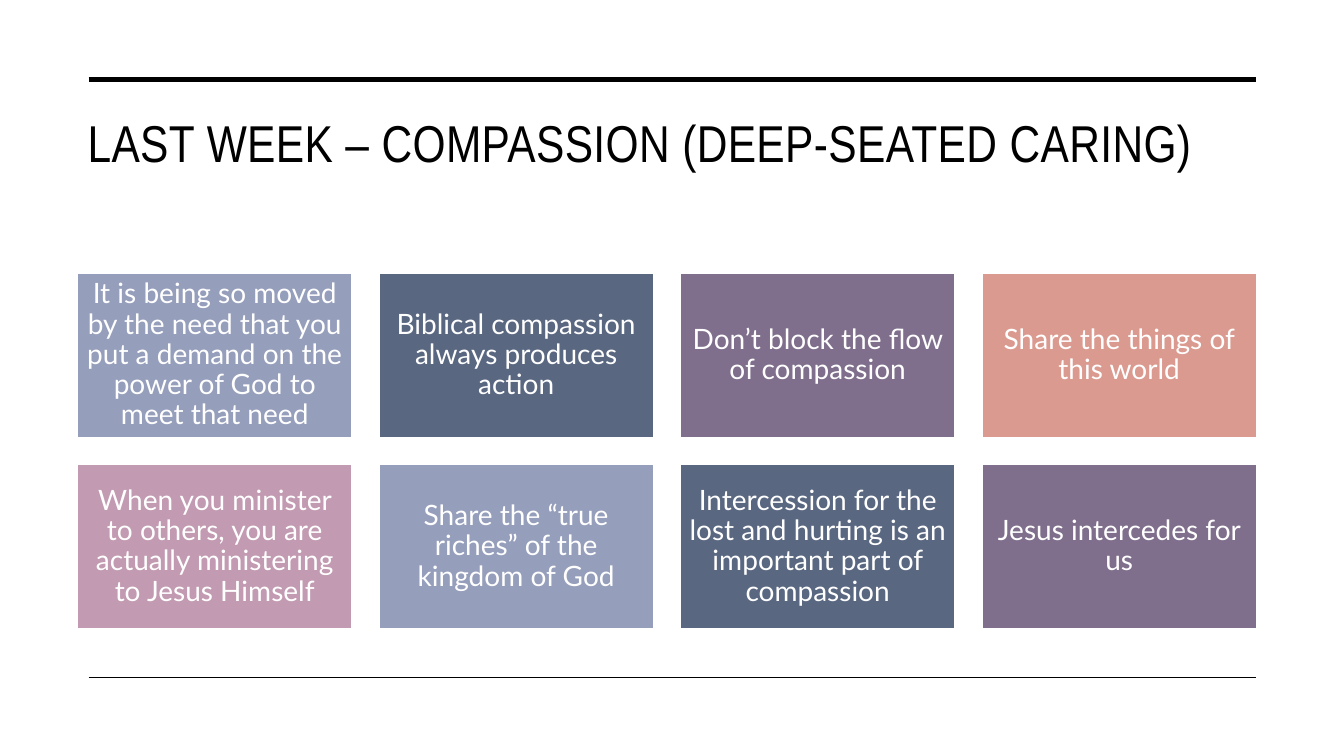
from lxml import etree
from pptx import Presentation, util as u
from pptx.dml.color import RGBColor
from pptx.enum import shapes, text
from pptx.oxml.ns import qn

BLUE, SLATE, PLUM, CORAL, ROSE = "959EBB", "596781", "7F6E8C", "DB9A8F", "C29AB1"
CARDS = [
    ("It is being so moved by the need that you put a demand on the power of God to meet that need", BLUE),
    ("Biblical compassion always produces action", SLATE),
    ("Don’t block the flow of compassion", PLUM),
    ("Share the things of this world", CORAL),
    ("When you minister to others, you are actually ministering to Jesus Himself", ROSE),
    ("Share the “true riches” of the kingdom of God", BLUE),
    ("Intercession for the lost and hurting is an important part of compassion", SLATE),
    ("Jesus intercedes for us", PLUM),
]


def colour(value):
    """Turn a hex string into a colour."""
    return RGBColor.from_string(value)


def apply(target, formats):
    """Set each format value on the target."""
    for name, value in formats.items():
        setattr(target, name, value)


class Board:
    """Style, card grid and current slide."""

    ink, paper = "000000", "FFFFFF"
    heading = {"name": "Arial Narrow", "size": u.Pt(37)}
    body = {"name": "Lato", "size": u.Pt(20)}
    columns, left, top = 4, 0.77, 2.71
    column_step, row_step = 2.99, 1.9
    card_width, card_height = 2.72, 1.63
    rule_left, rule_right = 0.88, 12.46

    def __init__(self, deck):
        """Add a blank page to the deck."""
        self.page = deck.slides.add_slide(deck.slide_layouts[6])

    def label(self, frame, words, font, ink, frame_format, para_format):
        """Fill a text frame with one styled paragraph."""
        apply(frame, {"word_wrap": True, **frame_format})
        para = frame.paragraphs[0]
        apply(para, para_format)
        span = para.add_run()
        span.text = words
        apply(span.font, font)
        span.font.color.rgb = colour(ink)
        return span

    def title(self, words):
        """Add the slide heading."""
        width = self.rule_right - self.left
        box = self.page.shapes.add_textbox(*map(u.Inches, (self.left, 0.99, width, 1.26)))
        span = self.label(box.text_frame, words, self.heading, self.ink,
                          {"margin_top": u.Inches(0.11)}, {})
        span._r.get_or_add_rPr().set("spc", "30")

    def rule(self, y, weight):
        """Draw a horizontal rule across the page."""
        ends = map(u.Inches, (self.rule_left, y, self.rule_right, y))
        line = self.page.shapes.add_connector(shapes.MSO_CONNECTOR.STRAIGHT, *ends)
        line.line.color.rgb = colour(self.ink)
        line.line.width = u.Pt(weight)
        etree.SubElement(line._element.spPr, qn("a:effectLst"))

    def card(self, index, words, fill):
        """Place a filled card at its grid position."""
        row, column = divmod(index, self.columns)
        place = (self.left + column * self.column_step, self.top + row * self.row_step,
                 self.card_width, self.card_height)
        box = self.page.shapes.add_shape(shapes.MSO_SHAPE.RECTANGLE, *map(u.Inches, place))
        box.shadow.inherit = False
        box.fill.solid()
        box.fill.fore_color.rgb = colour(fill)
        box.line.color.rgb = colour(self.paper)
        box.line.width = u.Pt(1)
        margins = {f"margin_{side}": u.Inches(0.08) for side in ("left", "top", "right", "bottom")}
        self.label(box.text_frame, words, self.body, self.paper,
                   {"vertical_anchor": text.MSO_ANCHOR.MIDDLE, **margins},
                   {"alignment": text.PP_ALIGN.CENTER, "line_spacing": 0.9})


def main():
    """Build and save the slide."""
    deck = Presentation()
    apply(deck, {"slide_width": u.Inches(13.33), "slide_height": u.Inches(7.5)})
    board = Board(deck)
    board.title("LAST WEEK – COMPASSION (DEEP-SEATED CARING)")
    board.rule(0.79, 3.5)
    board.rule(6.72, 1)
    for index, (words, fill) in enumerate(CARDS):
        board.card(index, words, fill)
    deck.save("out.pptx")


if __name__ == "__main__":
    main()
